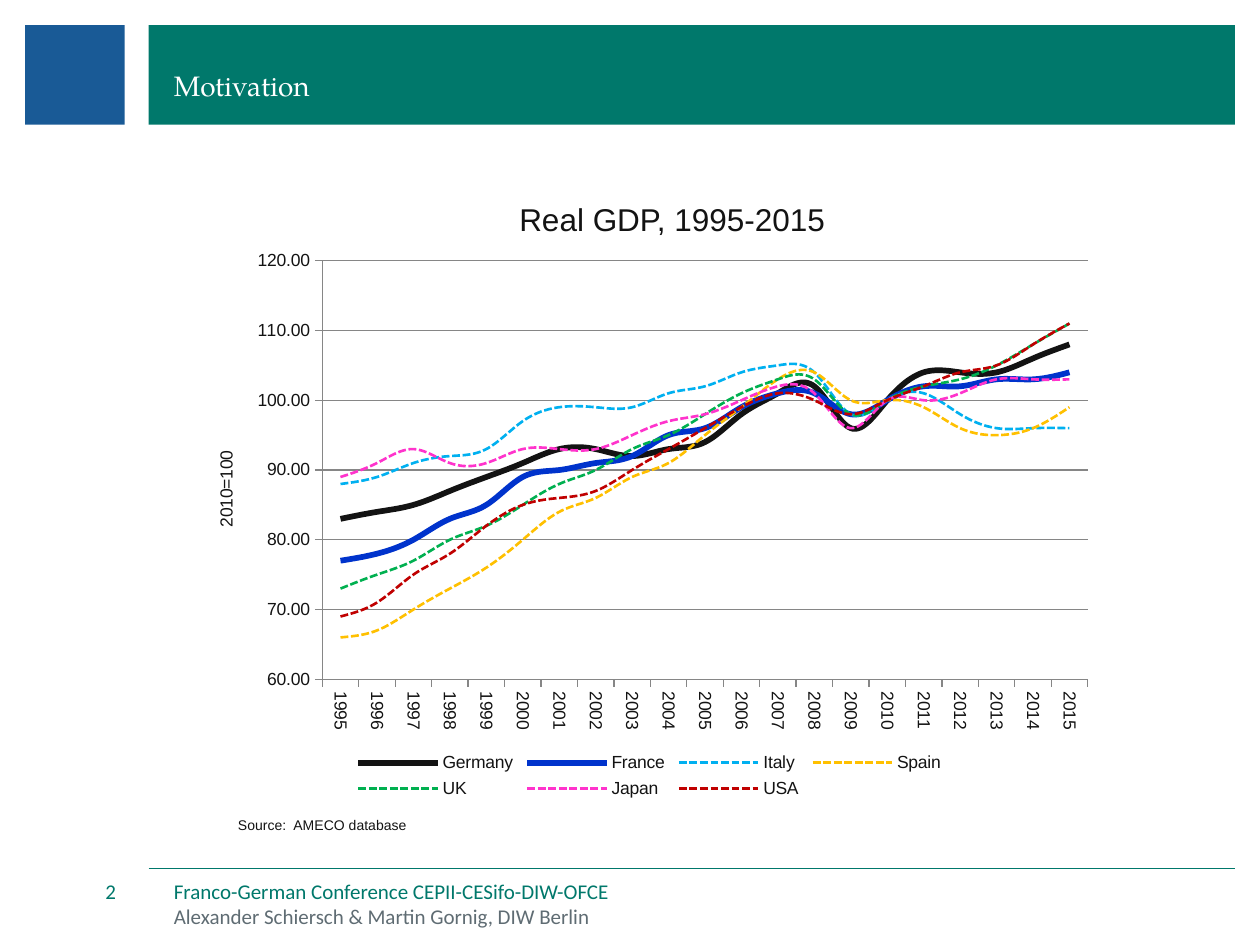
from lxml import etree
from pptx import Presentation
from pptx.chart.data import CategoryChartData
from pptx.dml.color import RGBColor
from pptx.enum.chart import XL_CHART_TYPE, XL_LEGEND_POSITION, XL_TICK_LABEL_POSITION, XL_TICK_MARK
from pptx.enum.dml import MSO_LINE
from pptx.enum.shapes import MSO_CONNECTOR, MSO_SHAPE
from pptx.enum.text import MSO_ANCHOR, PP_ALIGN
from pptx.oxml.ns import qn
from pptx.util import Inches, Pt

LINE, BOTTOM = XL_CHART_TYPE.LINE, XL_LEGEND_POSITION.BOTTOM
LOW, OUT = XL_TICK_LABEL_POSITION.LOW, XL_TICK_MARK.OUTSIDE
SOLID, DASH = MSO_LINE.SOLID, MSO_LINE.SQUARE_DOT
RECT, STRAIGHT = MSO_SHAPE.RECTANGLE, MSO_CONNECTOR.STRAIGHT
TOP, MIDDLE, BASE = MSO_ANCHOR.TOP, MSO_ANCHOR.MIDDLE, MSO_ANCHOR.BOTTOM
LEFT, CENTER, RIGHT = PP_ALIGN.LEFT, PP_ALIGN.CENTER, PP_ALIGN.RIGHT

COLORS = {
    "white": "FFFFFF", "green": "00786B", "blue": "195A96", "gray": "5F6C73",
    "ink": "131313", "grid": "868686", "royal": "0033CC", "sky": "00B0F0",
    "gold": "FFC000", "leaf": "00B050", "pink": "FF33CC", "red": "C00000",
}
YEARS = [str(year) for year in range(1995, 2016)]
GDP = [
    ("Germany", "ink", 3.25, SOLID, [83, 84, 85, 87, 89, 91, 93, 93, 92, 93, 94,
                                     98, 101, 102, 96, 100, 104, 104, 104, 106, 108]),
    ("France", "royal", 3.25, SOLID, [77, 78, 80, 83, 85, 89, 90, 91, 92, 95, 96,
                                      99, 101, 101, 98, 100, 102, 102, 103, 103, 104]),
    ("Italy", "sky", 1.5, DASH, [88, 89, 91, 92, 93, 97, 99, 99, 99, 101, 102,
                                 104, 105, 104, 98, 100, 101, 98, 96, 96, 96]),
    ("Spain", "gold", 1.5, DASH, [66, 67, 70, 73, 76, 80, 84, 86, 89, 91, 95,
                                  99, 103, 104, 100, 100, 99, 96, 95, 96, 99]),
    ("UK", "leaf", 1.5, DASH, [73, 75, 77, 80, 82, 85, 88, 90, 93, 95, 98,
                               101, 103, 103, 98, 100, 102, 103, 105, 108, 111]),
    ("Japan", "pink", 1.5, DASH, [89, 91, 93, 91, 91, 93, 93, 93, 95, 97, 98,
                                  100, 102, 101, 96, 100, 100, 101, 103, 103, 103]),
    ("USA", "red", 1.5, DASH, [69, 71, 75, 78, 82, 85, 86, 87, 90, 93, 96,
                               99, 101, 100, 98, 100, 102, 104, 105, 108, 111]),
]


class Deck:
    """Holds the style and the current slide, and draws each kind of element."""

    def __init__(self):
        self.prs = Presentation()
        self.prs.slide_width, self.prs.slide_height = Inches(10), Inches(7.5)
        self.slide = self.prs.slides.add_slide(self.prs.slide_layouts[5])
        self.shapes = self.slide.shapes

    def color(self, name):
        return RGBColor.from_string(COLORS[name])

    def apply(self, item, **values):
        for key, value in values.items():
            setattr(item, key, value)

    def font(self, font, name, size, color):
        self.apply(font, name=name, size=Pt(size), bold=False)
        font.color.rgb = self.color(color)

    def stroke(self, line, color, width, dash=SOLID):
        line.color.rgb = self.color(color)
        self.apply(line, width=Pt(width), dash_style=dash)

    def block(self, box, color):
        shape = self.shapes.add_shape(RECT, *map(Inches, box))
        shape.shadow.inherit = False
        shape.fill.solid()
        shape.fill.fore_color.rgb = self.color(color)
        shape.line.fill.background()

    def rule(self, ends, color, width):
        line = self.shapes.add_connector(STRAIGHT, *map(Inches, ends))
        self.stroke(line.line, color, width)
        etree.SubElement(line.element.spPr, qn("a:effectLst"))

    def label(self, shape, box, text, name, size, color, align=LEFT, anchor=TOP,
              inset=(0, 0), wrap=True):
        left, top, width, height = map(Inches, box)
        self.apply(shape, left=left, top=top, width=width, height=height)
        side, edge = map(Inches, inset)
        frame = shape.text_frame
        self.apply(frame, text=text, word_wrap=wrap, vertical_anchor=anchor,
                   margin_left=side, margin_right=side, margin_top=edge, margin_bottom=edge)
        para = frame.paragraphs[0]
        para.alignment = align
        self.font(para.runs[0].font, name, size, color)

    def title(self, box, text, *style, **form):
        shape = self.shapes.title
        shape.element.getparent().append(shape.element)
        self.label(shape, box, text, *style, **form)

    def text(self, box, text, *style, **form):
        shape = self.shapes.add_textbox(*map(Inches, box))
        self.label(shape, box, text, *style, **form)

    def place(self, node, index, **sizes):
        for old in node.findall(qn("c:layout")):
            node.remove(old)
        layout = etree.Element(qn("c:layout"))
        node.insert(index, layout)
        manual = etree.SubElement(layout, qn("c:manualLayout"))
        if index == 0:
            etree.SubElement(manual, qn("c:layoutTarget")).set("val", "inner")
        for mode in ("xMode", "yMode"):
            etree.SubElement(manual, qn("c:" + mode)).set("val", "edge")
        for key, value in sizes.items():
            etree.SubElement(manual, qn("c:" + key)).set("val", str(value))

    def turn(self, node, angle):
        body = next(node.iter(qn("a:bodyPr")))
        body.set("rot", str(angle * 60000))
        body.set("vert", "horz")

    def chart(self, box, label):
        data = CategoryChartData(number_format="0")
        data.categories = YEARS
        for name, *_, values in GDP:
            data.add_series(name, values)
        chart = self.shapes.add_chart(LINE, *map(Inches, box), data).chart
        root = chart.plots[0].series[0].format.line.fill
        self.apply(chart, has_title=False, has_legend=True)
        self.font(chart.font, "Arial", 10, "ink")
        self.apply(chart.legend, position=BOTTOM, include_in_layout=False)
        plot = chart.plots[0]
        plot.vary_by_categories = False
        for line, (_, color, width, dash, _) in zip(plot.series, GDP):
            line.smooth = True
            self.stroke(line.format.line, color, width, dash)
        self.axes(chart, label)
        area = chart.category_axis._element.getparent()
        self.place(area, 0, x=0.15, y=0.04, w=0.83, h=0.74)
        legend = area.getparent().find(qn("c:legend"))
        self.place(legend, 1, x=0.18, y=0.9, w=0.65, h=0.1)

    def axes(self, chart, label):
        years, level = chart.category_axis, chart.value_axis
        for axis in (years, level):
            axis.major_tick_mark = OUT
            self.stroke(axis.format.line, "grid", 0.75)
            self.font(axis.tick_labels.font, "Arial", 10, "ink")
        years.tick_label_position = LOW
        self.turn(years._element, 90)
        self.apply(level, minimum_scale=60, maximum_scale=120, major_unit=10,
                   has_major_gridlines=True, has_title=True)
        self.apply(level.tick_labels, number_format="#,##0.00", number_format_is_linked=False)
        self.stroke(level.major_gridlines.format.line, "grid", 0.75)
        frame = level.axis_title.text_frame
        frame.text = label
        self.font(frame.paragraphs[0].runs[0].font, "Arial", 10, "ink")
        title = level._element.find(qn("c:title"))
        self.turn(title, -90)
        self.place(title, 1, x=0.03, y=0.37)


def main():
    deck = Deck()
    deck.block((0.2, 0.2, 0.79, 0.79), "blue")
    deck.rule((1.18, 6.89, 9.8, 6.89), "green", 0.5)
    deck.block((1.18, 0.2, 8.62, 0.79), "green")
    deck.title((1.38, 0.33, 8.17, 0.48), "Motivation", "TeX Gyre Pagella", 16, "white", anchor=BASE)
    loose = {"inset": (0.1, 0.05), "wrap": False}
    deck.text((4.01, 1.54, 2.65, 0.4), "Real GDP, 1995-2015", "Arial", 18, "ink", align=CENTER, **loose)
    deck.text((1.79, 6.43, 1.56, 0.24), "Source:  AMECO database", "Arial", 8, "ink", **loose)
    deck.chart((1.46, 1.89, 7.32, 4.49), "2010=100")
    deck.text((1.38, 7.17, 6.66, 0.2), "Alexander Schiersch & Martin Gornig, DIW Berlin", "Calibri", 12, "gray")
    deck.text((1.38, 6.97, 6.66, 0.2), "Franco-German Conference CEPII-CESifo-DIW-OFCE", "Calibri", 12, "green")
    deck.text((0.17, 6.97, 0.75, 0.2), "2", "Calibri", 12, "green", align=RIGHT, anchor=MIDDLE)
    deck.prs.save("out.pptx")


if __name__ == "__main__":
    main()
